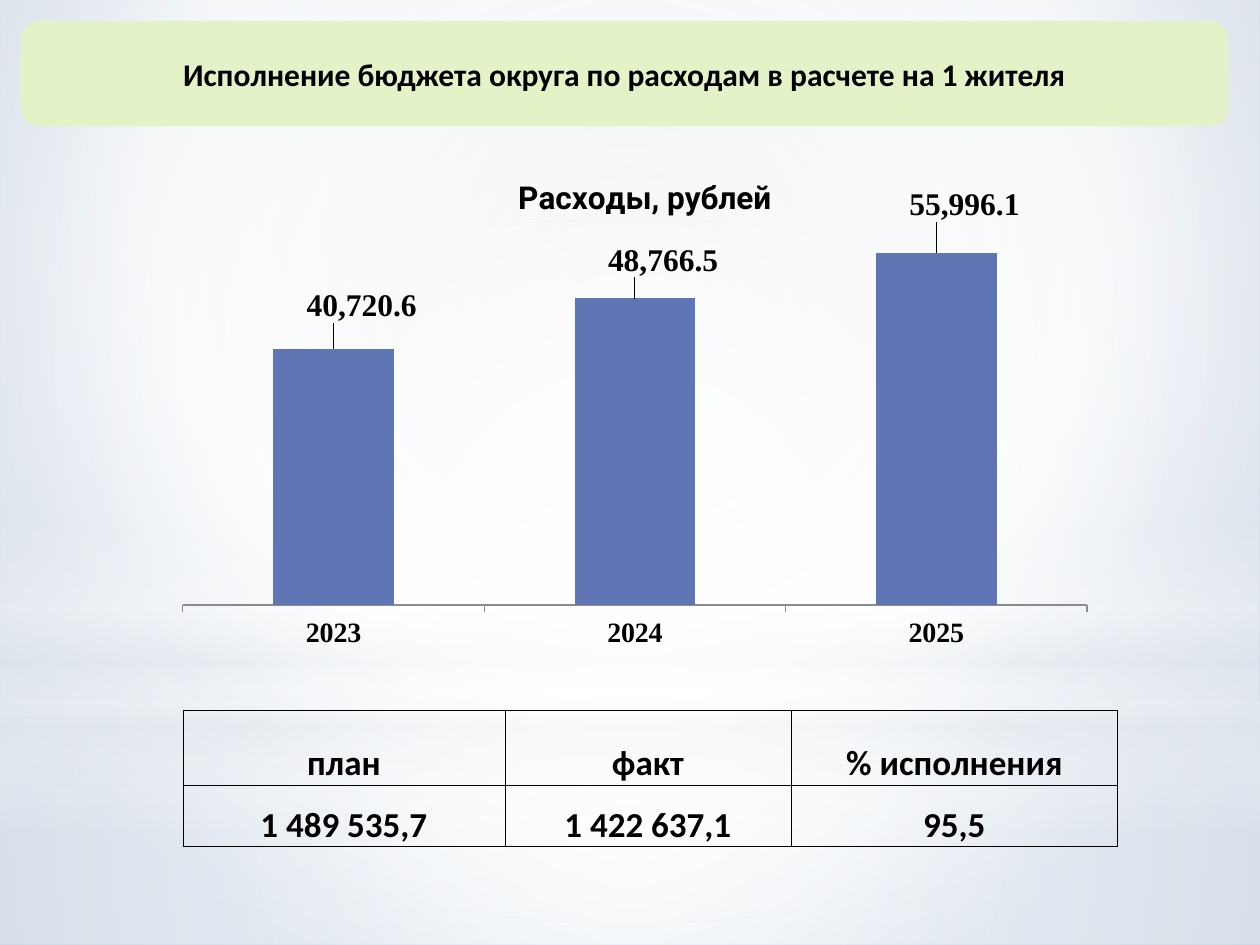
import pptx
import pptx.chart.data
import pptx.dml.color
import pptx.enum.chart
import pptx.enum.shapes
import pptx.enum.text
import pptx.oxml
import pptx.oxml.ns
import pptx.util

PX = 914400 // 126
BLACK = "000000"
NUMBER_FORMAT = "#,##0.0"
qn = pptx.oxml.ns.qn

# Content
HEADING = "Исполнение бюджета округа по расходам в расчете на 1 жителя"
CHART_TITLE = "Расходы, рублей"
SPENDING = {"2023": 40720.6, "2024": 48766.5, "2025": 55996.1}
LABEL_SHIFTS = [(0.03, -0.04), (0.03, -0.03), (0.03, -0.05)]
TABLE_ROWS = [
    ("план", "факт", "% исполнения"),
    ("1 489 535,7", "1 422 637,1", "95,5"),
]
COLUMN_WIDTHS = (322, 286, 327)
ROW_HEIGHTS = (75, 62)

# Gradients: stops are (position %, colour, opacity %)
CENTRE = (50, 50, 50, 50)
BACKGROUND = [(0, "D7DFE8", 100), (60, "FFFFFF", 100), (100, "A3B9D4", 100)]
VEILS = [
    ("RECTANGLE", (0, 703, 1260, 242), CENTRE,
     [(0, "FFFFFF", 91), (37, "FFFFFF", 76), (100, "E4E9EF", 79)]),
    ("RECTANGLE", (0, 0, 1260, 703), CENTRE,
     [(0, "FFFFFF", 89), (48, "FFFFFF", 62), (100, "E4E9EF", 79)]),
    ("RECTANGLE", (0, 519, 1260, 315), None,
     [(0, "FFFFFF", 0), (29, "FFFFFF", 30), (45, "E4E9EF", 40),
      (55, "FFFFFF", 26), (65, "E4E9EF", 60), (100, "FFFFFF", 0)]),
    ("OVAL", (0, 220, 1260, 703), CENTRE,
     [(0, "FFFFFF", 100), (56, "FFFFFF", 0)]),
]


def px(*lengths):
    return [length * PX for length in lengths]


def color(value):
    return pptx.dml.color.RGBColor.from_string(value)


def style_font(font, size, name, bold=True):
    font.size, font.name, font.bold = pptx.util.Pt(size), name, bold
    font.color.rgb = color(BLACK)


def write(frame, text, size=18, name="Calibri"):
    paragraph = frame.paragraphs[0]
    paragraph.alignment = pptx.enum.text.PP_ALIGN.CENTER
    run = paragraph.add_run()
    run.text = text
    style_font(run.font, size, name)


def set_gradient(properties, stops, focus):
    """Swap a solid fill for a circular gradient, or a vertical one without focus."""
    stop_xml = "".join(
        f'<a:gs pos="{position * 1000}"><a:srgbClr val="{value}">'
        f'<a:alpha val="{opacity * 1000}"/></a:srgbClr></a:gs>'
        for position, value, opacity in stops)
    if focus:
        sides = " ".join(f'{side}="{part * 1000}"' for side, part in zip("ltrb", focus))
        direction = f'<a:path path="circle"><a:fillToRect {sides}/></a:path>'
    else:
        direction = '<a:lin ang="5400000" scaled="0"/>'
    gradient = pptx.oxml.parse_xml(
        f'<a:gradFill {pptx.oxml.ns.nsdecls("a")} rotWithShape="1">'
        f'<a:gsLst>{stop_xml}</a:gsLst>{direction}</a:gradFill>')
    properties.replace(properties.find(qn("a:solidFill")), gradient)


def add_shape(slide, kind, box, fill):
    shape = slide.shapes.add_shape(
        getattr(pptx.enum.shapes.MSO_SHAPE, kind), *px(*box))
    shape.shadow.inherit = False
    shape.fill.solid()
    shape.fill.fore_color.rgb = color(fill)
    shape.line.fill.background()
    return shape


def chart_layout(x, y, size=None):
    parts = {"xMode": "edge", "yMode": "edge"} if size else {}
    parts.update(x=x, y=y)
    if size:
        parts = {"layoutTarget": "inner", **parts, "w": size[0], "h": size[1]}
    body = "".join(f'<c:{key} val="{value}"/>' for key, value in parts.items())
    return pptx.oxml.parse_xml(
        f'<c:layout {pptx.oxml.ns.nsdecls("c")}>'
        f'<c:manualLayout>{body}</c:manualLayout></c:layout>')


def add_spending_chart(slide):
    data = pptx.chart.data.CategoryChartData(number_format=NUMBER_FORMAT)
    data.categories = list(SPENDING)
    data.add_series(CHART_TITLE, list(SPENDING.values()))
    chart = slide.shapes.add_chart(
        pptx.enum.chart.XL_CHART_TYPE.COLUMN_CLUSTERED,
        *px(164, 145, 942, 517), data).chart
    style_font(chart.font, 10, "Roboto", bold=False)
    chart.has_legend = False
    chart.has_title = True
    write(chart.chart_title.text_frame, CHART_TITLE, name="Roboto")
    chart.chart_title.include_in_layout = False

    # Axes
    years, amounts = chart.category_axis, chart.value_axis
    style_font(years.tick_labels.font, 16, "Times New Roman")
    years.major_tick_mark = pptx.enum.chart.XL_TICK_MARK.OUTSIDE
    years.format.line.color.rgb = color("8B8B8B")
    amounts.visible = False
    amounts.has_major_gridlines = False
    amounts.minimum_scale, amounts.maximum_scale = 0, 60000
    amounts.tick_labels.number_format = NUMBER_FORMAT

    # Columns and their shifted labels
    plot = chart.plots[0]
    plot.gap_width = 150
    plot.vary_by_categories = False
    series = plot.series[0]
    series.format.fill.solid()
    series.format.fill.fore_color.rgb = color("6076B4")
    labels = series.data_labels
    labels.show_value = True
    labels.number_format, labels.number_format_is_linked = NUMBER_FORMAT, False
    style_font(labels.font, 18, "Times New Roman")
    for index, shift in enumerate(LABEL_SHIFTS):
        label = series.points[index].data_label
        style_font(label.font, 18, "Times New Roman")
        label.position = pptx.enum.chart.XL_LABEL_POSITION.OUTSIDE_END
    for element, shift in zip(series.data_labels._element.findall(qn("c:dLbl")), LABEL_SHIFTS):
        element.find(qn("c:idx")).addnext(chart_layout(*shift))

    # Places of the title and the plot area
    title = chart.chart_title._element
    plot_area = chart._chartSpace.find(".//" + qn("c:plotArea"))
    for parent in (title, plot_area):
        for old in parent.findall(qn("c:layout")):
            parent.remove(old)
    title_layout = chart_layout(0.37, 0.05, size=(0.27, 0.08))
    manual = title_layout[0]
    for tag in ("c:layoutTarget", "c:w", "c:h"):
        manual.remove(manual.find(qn(tag)))
    title.find(qn("c:tx")).addnext(title_layout)
    plot_area.insert(0, chart_layout(0.02, 0.16, size=(0.96, 0.73)))


def add_border(cell):
    properties = cell._tc.get_or_add_tcPr()
    for index, side in enumerate(("lnL", "lnR", "lnT", "lnB")):
        properties.insert(index, pptx.oxml.parse_xml(
            f'<a:{side} {pptx.oxml.ns.nsdecls("a")} w="6350"><a:solidFill>'
            f'<a:srgbClr val="{BLACK}"/></a:solidFill></a:{side}>'))


def add_totals_table(slide):
    table = slide.shapes.add_table(
        len(ROW_HEIGHTS), len(COLUMN_WIDTHS),
        *px(183, 710, sum(COLUMN_WIDTHS), sum(ROW_HEIGHTS))).table
    table.first_row = table.horz_banding = False
    for column, width in zip(table.columns, px(*COLUMN_WIDTHS)):
        column.width = width
    for row, height, texts in zip(table.rows, px(*ROW_HEIGHTS), TABLE_ROWS):
        row.height = height
        for cell, text in zip(row.cells, texts):
            cell.fill.background()
            cell.vertical_anchor = pptx.enum.text.MSO_ANCHOR.BOTTOM
            cell.margin_left = cell.margin_right = cell.margin_top = PX
            cell.margin_bottom = 0
            write(cell.text_frame, text, size=20)
            add_border(cell)


def main():
    presentation = pptx.Presentation()
    presentation.slide_width, presentation.slide_height = px(1260, 945)
    slide = presentation.slides.add_slide(presentation.slide_layouts[6])

    # Background and its translucent veils
    slide.background.fill.solid()
    set_gradient(slide._element.find(".//" + qn("p:bgPr")), BACKGROUND, (20, 10, 20, 60))
    for kind, box, focus, stops in VEILS:
        veil = add_shape(slide, kind, box, "FFFFFF")
        set_gradient(veil._element.spPr, stops, focus)

    # Heading, table and chart
    heading = add_shape(slide, "ROUNDED_RECTANGLE", (21, 21, 1207, 105), "E3F2C7")
    heading.text_frame.word_wrap = True
    heading.text_frame.vertical_anchor = pptx.enum.text.MSO_ANCHOR.MIDDLE
    write(heading.text_frame, HEADING)
    add_totals_table(slide)
    add_spending_chart(slide)
    presentation.save("out.pptx")


if __name__ == "__main__":
    main()
